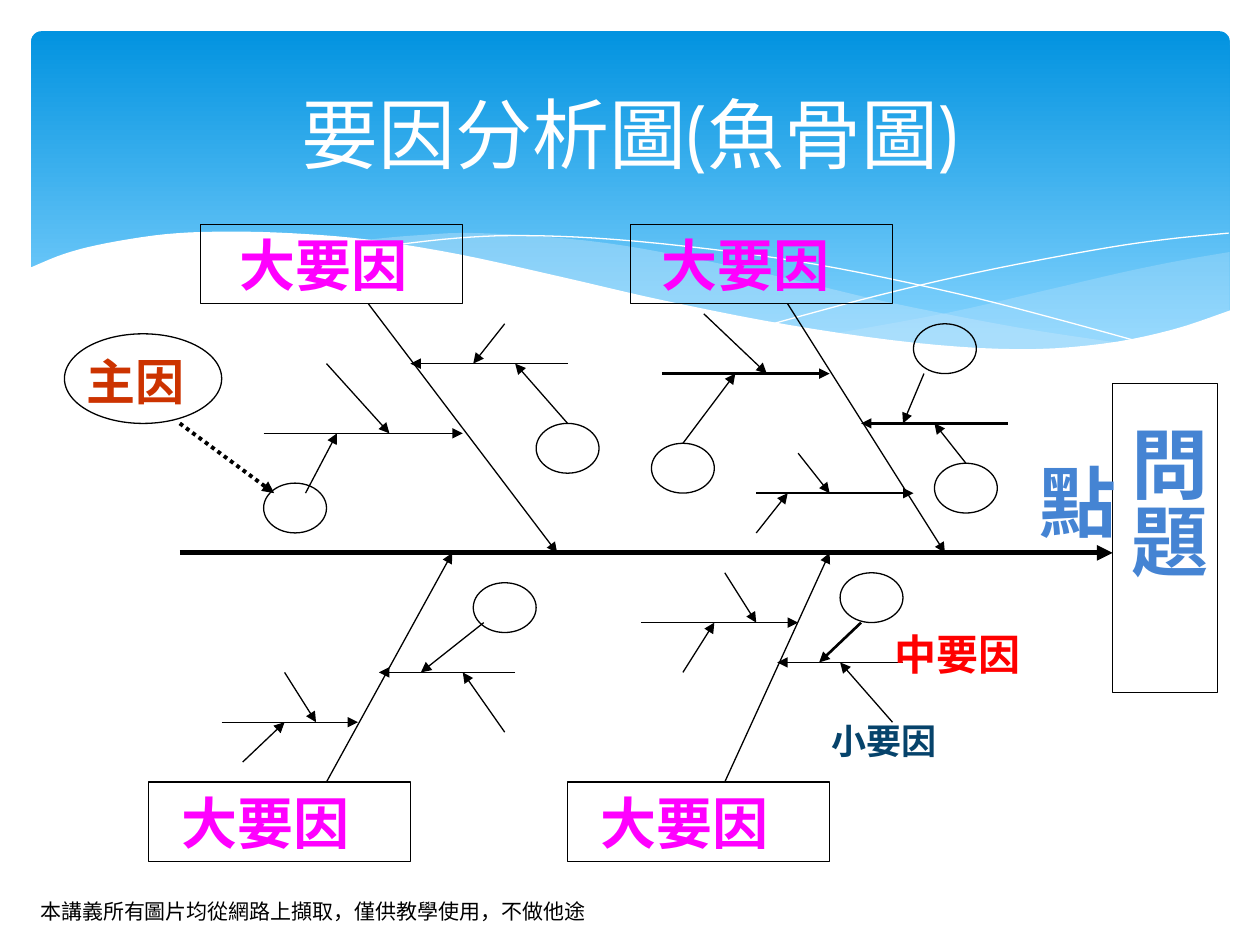
from lxml import etree
from pptx import Presentation
from pptx import util as u
from pptx.dml.color import RGBColor
from pptx.enum import dml, shapes, text
from pptx.oxml.ns import qn

COLORS = {"sky": "0293E0", "pale": "83D3FE", "mist": "C6E7FC", "white": "FFFFFF",
          "black": "000000", "major": "FF00FF", "middle": "FF0000",
          "minor": "06436B", "problem": "4584D3", "main": "CC3300"}
RGB = {name: RGBColor.from_string(value) for name, value in COLORS.items()}

# The fishbone sits on a grid: columns and rows counted from its top left corner.
X = [u.Cm(1.3 + 21.13 / 100 * i) for i in range(111)]
Y = [u.Cm(4.52 + 12.85 / 64 * i) for i in range(65)]

prs = Presentation()
prs.slide_width, prs.slide_height = u.Cm(25.4), u.Cm(19.05)
s = prs.slides.add_slide(prs.slide_layouts[6])


def smooth(points, steps=5):
    """Return points along a Catmull-Rom curve through the given points."""
    padded = [points[0], *points, points[-1]]
    curve = []
    for a, b, c, d in zip(padded, padded[1:], padded[2:], padded[3:]):
        for t in (i / steps for i in range(steps)):
            curve.append(tuple(
                (2 * q + (r - p) * t + (2 * p - 5 * q + 4 * r - v) * t ** 2
                 + (3 * q - p - 3 * r + v) * t ** 3) / 2
                for p, q, r, v in zip(a, b, c, d)))
    return curve + [points[-1]]


def add_text(words, left, top, width, height, size, color, **formats):
    """Add a text box; formats may hold font, bold, wrap, align, anchor, autosize."""
    tf = s.shapes.add_textbox(left, top, width, height).text_frame
    tf.word_wrap = formats.get("wrap", True)
    tf.vertical_anchor = formats.get("anchor", text.MSO_ANCHOR.TOP)
    tf.auto_size = formats.get("autosize", text.MSO_AUTO_SIZE.SHAPE_TO_FIT_TEXT)
    p = tf.paragraphs[0]
    p.alignment = formats.get("align", text.PP_ALIGN.LEFT)
    r = p.add_run()
    r.text = words
    font = {"name": formats.get("font", "Arial"), "size": u.Pt(size),
            "bold": formats.get("bold", True)}
    for key, value in font.items():
        setattr(r.font, key, value)
    r.font.color.rgb = RGB[color]
    return tf


# Banner with waves
sp = s.shapes.add_shape(shapes.MSO_SHAPE.ROUNDED_RECTANGLE,
                        u.Cm(0.63), u.Cm(0.63), u.Cm(24.16), u.Cm(6.86))
sp.adjustments[0] = 0.03
sp.shadow.inherit = False
sp.line.fill.background()
sp.fill.gradient()
sp.fill.gradient_angle = 270
for stop, color, position in zip(sp.fill.gradient_stops, ("sky", "pale"), (0, 0.9)):
    stop.color.rgb, stop.position = RGB[color], position

right_wave = (
    smooth([(24.79, 5.08), (23.75, 5.26), (22.63, 5.49), (21.13, 5.84),
            (19.13, 6.3), (16.79, 6.73)])
    + smooth([(16.79, 6.73), (18.26, 6.91), (19.53, 7.04), (20.93, 7.04),
              (22.38, 6.93), (23.57, 6.68), (24.79, 6.27)]))
middle_wave = (
    smooth([(22.68, 6.93), (20.5, 6.6), (17.93, 6.1), (15.98, 5.64), (13.74, 5.16),
            (11.81, 4.85), (9.65, 4.7), (8.33, 4.75), (7.26, 4.85)])
    + smooth([(7.26, 4.85), (9.19, 5.16), (11.4, 5.64), (13.46, 6.1), (15.7, 6.55),
              (17.65, 6.86), (19.63, 7.04), (21.03, 7.06), (22.68, 6.93)]))
falling_line = smooth([(7.85, 4.95), (9.22, 4.8), (10.57, 4.75), (12.42, 4.83),
                       (14.78, 5.08), (16.89, 5.41), (19.3, 5.92), (21.11, 6.38),
                       (23.04, 6.91)])
rising_line = smooth([(15.57, 6.53), (17.65, 5.97), (19.71, 5.49), (22, 5.05),
                      (23.47, 4.83), (24.77, 4.7)])
white_wave = smooth([(24.82, 6.25), (23.62, 6.65), (22.23, 6.93), (20.55, 7.04),
                     (18.44, 6.91), (15.9, 6.55), (13.44, 6.07), (11.35, 5.59),
                     (9.27, 5.13), (7.42, 4.83), (5.84, 4.7), (4.5, 4.67),
                     (3.35, 4.72), (2.16, 4.9), (1.32, 5.11), (0.58, 5.41)])
white_wave += [(0.58, 8.36), (24.82, 8.36)]

for points, fill, opacity in [(right_wave, "mist", 29), (middle_wave, "mist", 40),
                              (falling_line, None, 100), (rising_line, None, 100),
                              (white_wave, "white", 100)]:
    points = [(u.Cm(x), u.Cm(y)) for x, y in points]
    fb = s.shapes.build_freeform(*points[0])
    fb.add_line_segments(points[1:], close=fill is not None)
    sp = fb.convert_to_shape()
    sp.shadow.inherit = False
    if fill:
        sp.fill.solid()
        sp.fill.fore_color.rgb = RGB[fill]
        sp.line.fill.background()
        if opacity < 100:
            clr = sp.fill._xPr.find(".//" + qn("a:srgbClr"))
            etree.SubElement(clr, qn("a:alpha"), val=str(opacity * 1000))
    else:
        sp.fill.background()
        sp.line.color.rgb, sp.line.width = RGB["white"], 0

# Boxes and circles: column, row, columns wide, rows high
rect, oval = shapes.MSO_SHAPE.RECTANGLE, shapes.MSO_SHAPE.OVAL
major_boxes = [(13, 0), (54, 0), (8, 56), (48, 56)]
circles = [(81, 10), (56, 22), (83, 24), (45, 20), (74, 35), (39, 36), (19, 26)]
outlines = [(rect, x, y, 25, 8) for x, y in major_boxes]
outlines += [(rect, 100, 16, 10, 31), (oval, 0, 11, 15, 9)]
outlines += [(oval, x, y, 6, 5) for x, y in circles]
circle_tops = {}
for kind, x, y, w, h in outlines:
    sp = s.shapes.add_shape(kind, X[x], Y[y], X[x + w] - X[x], Y[y + h] - Y[y])
    sp.shadow.inherit = False
    sp.fill.background()
    sp.line.color.rgb, sp.line.width = RGB["black"], u.Pt(0.75)
    if kind == oval:
        circle_tops[x + w // 2, y] = sp

# Arrows by line width: from column, row to column, row
arrows = {
    3: [(11, 33, 100, 33)],
    2.25: [(11, 20, 20, 27)],
    1.5: [(57, 15, 73, 15), (90, 20, 76, 20), (76, 40, 72, 44)],
    0.75: [
        (29, 8, 47, 33), (69, 8, 84, 33), (25, 56, 37, 33), (63, 56, 73, 33),
        (48, 14, 33, 14), (42, 10, 39, 14), (48, 20, 43, 14),
        (19, 21, 38, 21), (25, 14, 31, 21), (23, 27, 26, 21),
        (61, 9, 67, 15), (59, 22, 64, 15), (82, 15, 80, 20), (86, 24, 83, 20),
        (66, 27, 81, 27), (70, 23, 73, 27), (66, 31, 69, 27),
        (43, 45, 30, 45), (40, 40, 34, 45), (42, 51, 38, 45),
        (15, 50, 28, 50), (21, 45, 24, 50), (17, 54, 21, 50),
        (55, 40, 70, 40), (63, 35, 66, 40), (59, 45, 62, 40),
        (80, 44, 68, 44), (79, 50, 74, 44)],
}
for width, group in arrows.items():
    for x1, y1, x2, y2 in group:
        cn = s.shapes.add_connector(shapes.MSO_CONNECTOR.STRAIGHT,
                                    X[x1], Y[y1], X[x2], Y[y2])
        if (x1, y1) in circle_tops:
            cn.begin_connect(circle_tops[x1, y1], 0)
        cn.line.color.rgb, cn.line.width = RGB["black"], u.Pt(width)
        if width == 2.25:
            cn.line.dash_style = dml.MSO_LINE.ROUND_DOT
        ln = cn.line._get_or_add_ln()
        etree.SubElement(ln, qn("a:tailEnd"), type="triangle")
        etree.SubElement(cn._element.spPr, qn("a:effectLst"))

# Labels
for words, left, top, width, height, size, color in [
        ("大要因", 4.58, 4.52, 4.85, 1.63, 32, "major"),
        ("大要因", 13.08, 4.52, 4.85, 1.63, 32, "major"),
        ("大要因", 3.4, 15.77, 4.65, 1.63, 32, "major"),
        ("大要因", 11.86, 15.77, 4.85, 1.63, 32, "major"),
        ("中要因", 17.78, 12.55, 4.85, 1.27, 24, "middle"),
        ("小要因", 16.51, 14.38, 4.85, 1.12, 20, "minor"),
        ("主因", 1.5, 6.96, 2.97, 1.45, 28, "main")]:
    add_text(words, u.Cm(left), u.Cm(top), u.Cm(width), u.Cm(height), size, color)

tf = add_text("問題點", u.Cm(22.2), u.Cm(8.33), u.Cm(2.39), u.Cm(4.83), 44, "problem",
              align=text.PP_ALIGN.CENTER)
tf._txBody.bodyPr.set("vert", "eaVert")

add_text("本講義所有圖片均從網路上擷取，僅供教學使用，不做他途", u.Cm(0.56), u.Cm(17.98),
         u.Cm(11.63), u.Cm(0.76), 12, "black", font="Noto Sans CJK SC", bold=False,
         wrap=False)
add_text("要因分析圖(魚骨圖)", u.Cm(1.27), u.Cm(0.94), u.Cm(22.86), u.Cm(3.48), 44, "white",
         font="Cabin", bold=False, align=text.PP_ALIGN.CENTER,
         anchor=text.MSO_ANCHOR.MIDDLE, autosize=text.MSO_AUTO_SIZE.NONE)

prs.save("out.pptx")
